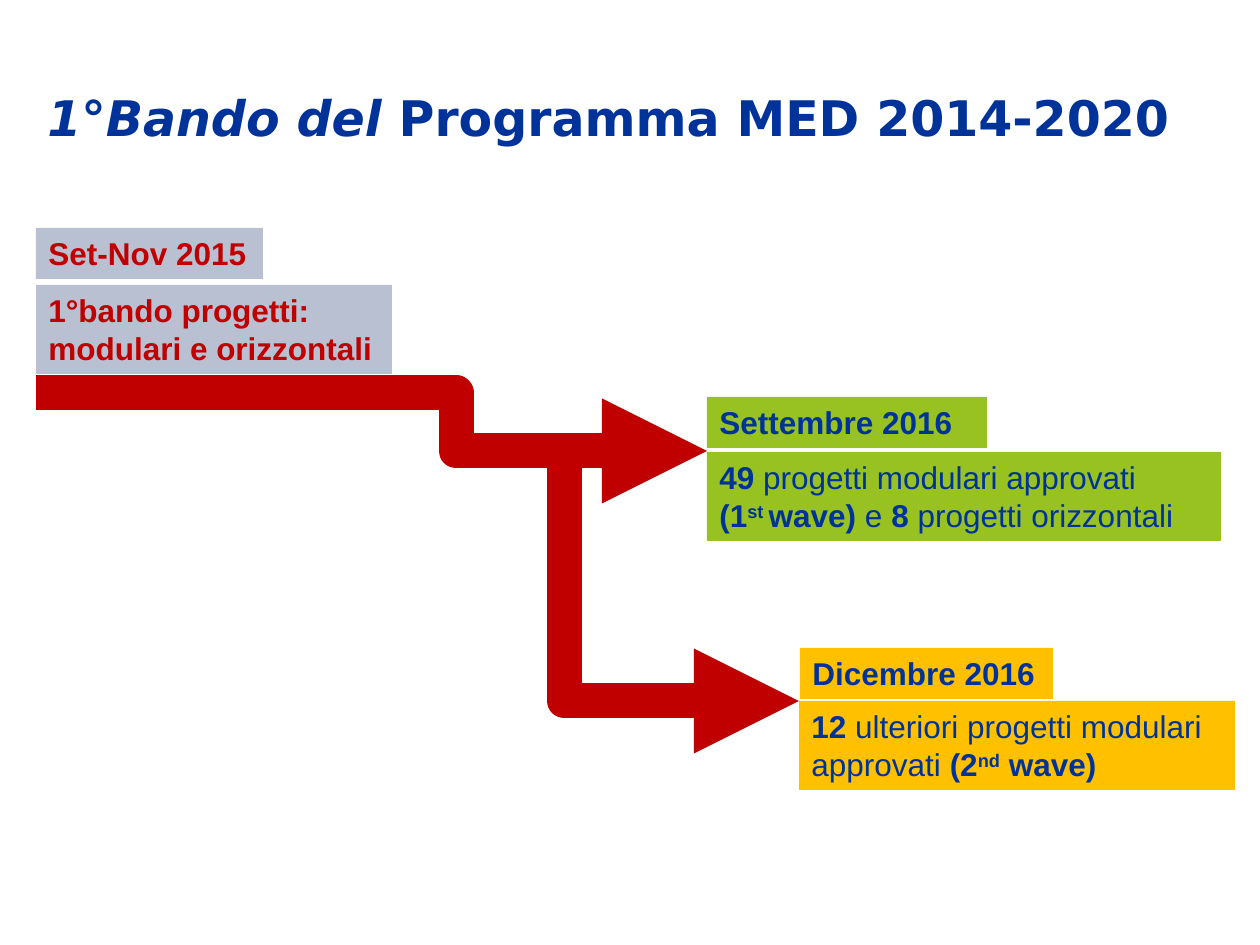
from pptx import Presentation
from pptx.dml.color import RGBColor
from pptx.enum.shapes import MSO_CONNECTOR as Connector
from pptx.enum.text import MSO_ANCHOR as Anchor
from pptx.oxml.ns import qn
from pptx.util import Pt
from lxml.etree import SubElement

PX = 914400 / 126  # EMU per px
COLORS = {"blue": "003399", "navy": "002060", "red": "C00000",
          "green": "98C222", "amber": "FFC000"}

prs = Presentation()
prs.slide_width, prs.slide_height = round(1260 * PX), round(945 * PX)
slide = prs.slides.add_slide(prs.slide_layouts[6])


def add_text(box, lines, color="blue", size=18, font="Arial",
             fill=None, alpha=None, anchor=Anchor.TOP):
    """Each line is a list of (text, style); style holds b, i or ^ (superscript)."""
    shape = slide.shapes.add_textbox(*[round(v * PX) for v in box])
    if fill:
        shape.fill.solid()
        shape.fill.fore_color.rgb = RGBColor.from_string(COLORS[fill])
    if alpha:
        tint = shape._element.spPr.find(".//" + qn("a:srgbClr"))
        SubElement(tint, qn("a:alpha"), val=str(alpha * 1000))
    frame = shape.text_frame
    frame.word_wrap = True
    frame.vertical_anchor = anchor
    for i, line in enumerate(lines):
        para = frame.add_paragraph() if i else frame.paragraphs[0]
        for text, style in line:
            run = para.add_run()
            run.text = text
            run.font.name, run.font.size = font, Pt(size)
            run.font.bold, run.font.italic = "b" in style, "i" in style
            run.font.color.rgb = RGBColor.from_string(COLORS[color])
            if "^" in style:
                run._r.get_or_add_rPr().set("baseline", "30000")


# Title
add_text((35, 38, 1186, 157),
         [[("1°Bando del ", "bi"), ("Programma MED 2014-2020", "b")]],
         size=28, font="DejaVu Sans", anchor=Anchor.MIDDLE)

# Call for projects
call_style = dict(color="red", fill="navy", alpha=28)
add_text((36, 228, 227, 51), [[("Set-Nov 2015", "b")]], **call_style)
add_text((36, 285, 356, 89), [[("1°bando progetti:", "b")],
                              [("modulari e orizzontali", "b")]], **call_style)

# Arrows from the call to each wave: start, end, bend in thousandths of the width
for x1, y1, x2, y2, bend in [(36, 393, 707, 451, 626), (499, 451, 799, 701, 218)]:
    arrow = slide.shapes.add_connector(
        Connector.ELBOW, *[round(v * PX) for v in (x1, y1, x2, y2)])
    arrow.line.color.rgb = RGBColor.from_string(COLORS["red"])
    arrow.line.width = Pt(20)
    props = arrow._element.spPr
    guides = props.find(qn("a:prstGeom")).get_or_add_avLst()
    SubElement(guides, qn("a:gd"), name="adj1", fmla=f"val {bend * 100}")
    stroke = arrow.line._get_or_add_ln()
    SubElement(stroke, qn("a:round"))
    SubElement(stroke, qn("a:tailEnd"), type="triangle")
    SubElement(props, qn("a:effectLst"))

# First wave
add_text((707, 397, 280, 51), [[("Settembre 2016", "b")]], fill="green")
add_text((707, 452, 514, 89),
         [[("49 ", "b"), ("progetti modulari approvati", "")],
          [("(1", "b"), ("st ", "b^"), ("wave) ", "b"), ("e ", ""),
           ("8 ", "b"), ("progetti orizzontali", "")]], fill="green")

# Second wave
add_text((800, 648, 253, 51), [[("Dicembre 2016", "b")]], fill="amber")
add_text((799, 701, 436, 89),
         [[("12 ", "b"), ("ulteriori progetti modulari approvati ", ""),
           ("(2", "b"), ("nd", "b^"), (" wave)", "b")]], fill="amber")

prs.save("out.pptx")
